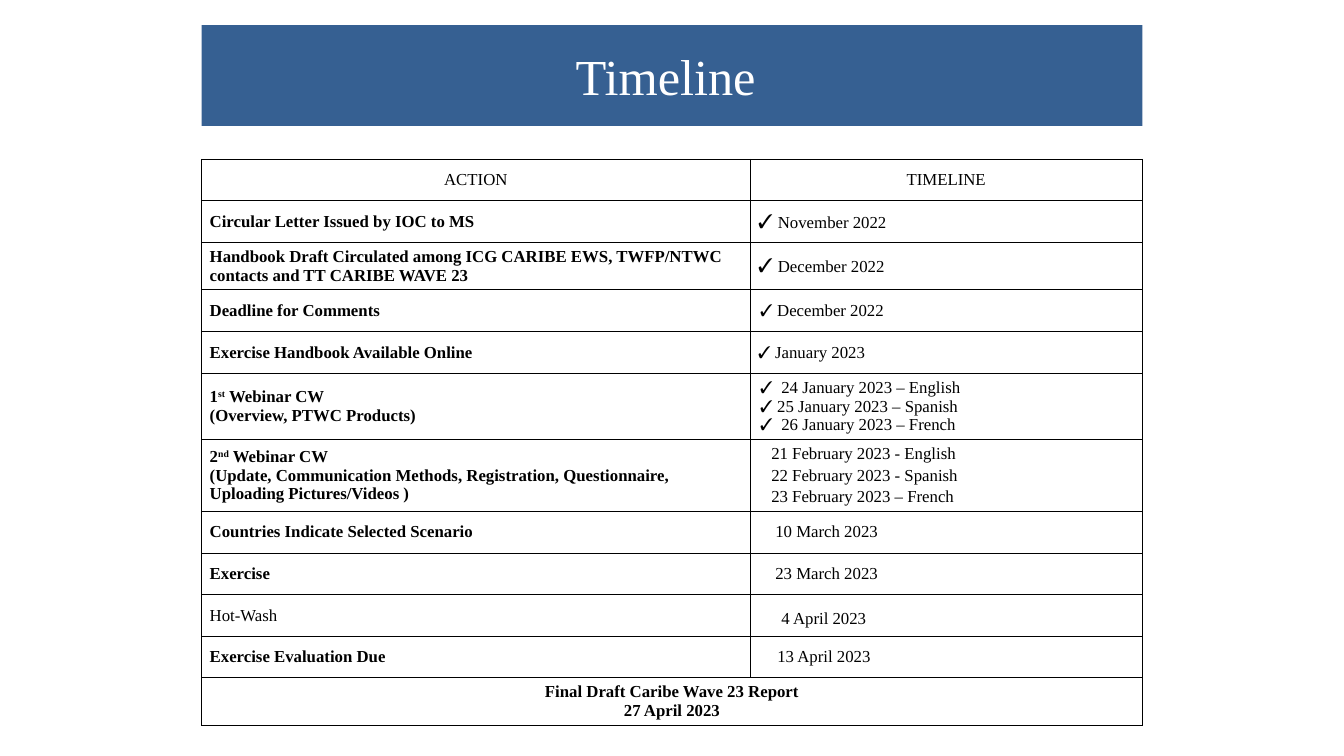
from dataclasses import dataclass

from lxml import etree
from pptx import Presentation
from pptx.dml.color import RGBColor
from pptx.enum import shapes, text
from pptx.oxml import ns
from pptx.util import Inches, Pt


@dataclass(frozen=True)
class Theme:
    font: str = "Times New Roman"
    banner: RGBColor = RGBColor(0x36, 0x60, 0x92)
    on_banner: RGBColor = RGBColor(0xFF, 0xFF, 0xFF)
    ink: RGBColor = RGBColor(0, 0, 0)
    heading: int = 36
    body: int = 12
    tick: int = 14
    rule: float = 0.75


@dataclass(frozen=True)
class Entry:
    paragraphs: tuple
    bold: bool = False
    centred: bool = False
    inset: float = 0.08
    top: float = 0.05
    bottom: float = 0.05
    indent: float = 0
    before: float = 0


class Page:
    def __init__(self, slide, theme):
        self.slide = slide
        self.theme = theme

    def add_run(self, paragraph, words, size, color, bold=False, raised=False):
        run = paragraph.add_run()
        run.text = words
        run.font.name = self.theme.font
        run.font.size = Pt(size)
        run.font.bold = bold
        run.font.color.rgb = color
        if raised:
            run.font._element.set("baseline", "30000")

    def add_banner(self, words, left, top, width, height):
        banner = self.slide.shapes.add_shape(
            shapes.MSO_SHAPE.RECTANGLE, Inches(left), Inches(top), Inches(width), Inches(height))
        banner.shadow.inherit = False
        banner.fill.solid()
        banner.fill.fore_color.rgb = self.theme.banner
        banner.line.fill.background()
        frame = banner.text_frame
        frame.word_wrap = True
        frame.vertical_anchor = text.MSO_ANCHOR.MIDDLE
        heading = frame.paragraphs[0]
        heading.alignment = text.PP_ALIGN.CENTER
        self.add_run(heading, words, self.theme.heading, self.theme.on_banner)

    def add_borders(self, cell):
        props = cell._tc.get_or_add_tcPr()
        for position, side in enumerate(("lnL", "lnR", "lnT", "lnB")):
            border = etree.Element(ns.qn(f"a:{side}"), w=str(Pt(self.theme.rule)))
            fill = etree.SubElement(border, ns.qn("a:solidFill"))
            etree.SubElement(fill, ns.qn("a:srgbClr"), val=str(self.theme.ink))
            props.insert(position, border)

    def fill_cell(self, cell, entry):
        cell.vertical_anchor = text.MSO_ANCHOR.MIDDLE
        cell.margin_left = cell.margin_right = Inches(entry.inset)
        cell.margin_top = Inches(entry.top)
        cell.margin_bottom = Inches(entry.bottom)
        frame = cell.text_frame
        for number, runs in enumerate(entry.paragraphs):
            paragraph = frame.add_paragraph() if number else frame.paragraphs[0]
            paragraph.alignment = text.PP_ALIGN.CENTER if entry.centred else text.PP_ALIGN.LEFT
            if number and entry.before:
                paragraph.space_before = Pt(entry.before)
            if entry.indent:
                paragraph._p.get_or_add_pPr().set("marL", str(Inches(entry.indent)))
            for run in (runs,) if isinstance(runs, str) else runs:
                words, style = (run, {}) if isinstance(run, str) else run
                self.add_run(paragraph, words, style.get("size", self.theme.body),
                             self.theme.ink, entry.bold, style.get("raised", False))

    def add_schedule(self, rows, left, top, columns, base_height, tall_rows):
        schedule = self.slide.shapes.add_table(
            len(rows), len(columns), Inches(left), Inches(top),
            Inches(sum(columns)), Inches(base_height)).table
        schedule.first_row = False
        schedule.horz_banding = False
        for column, width in zip(schedule.columns, columns):
            column.width = Inches(width)
        for number, height in tall_rows.items():
            schedule.rows[number].height = Inches(height)
        for number, entries in enumerate(rows):
            for cell in schedule.rows[number].cells:
                cell.fill.background()
                self.add_borders(cell)
            if len(entries) == 1:
                schedule.cell(number, 0).merge(schedule.cell(number, len(columns) - 1))
            for column, entry in enumerate(entries):
                self.fill_cell(schedule.cell(number, column), entry)


def header(words):
    return Entry((words,), centred=True, inset=0.07, top=0, bottom=0)


def action(*paragraphs):
    return Entry(paragraphs, bold=True)


def date(*paragraphs, **layout):
    return Entry(paragraphs, **layout)


def main():
    theme = Theme()
    deck = Presentation()
    deck.slide_width, deck.slide_height = Inches(13.33), Inches(7.5)
    page = Page(deck.slides.add_slide(deck.slide_layouts[6]), theme)
    tick = {"size": theme.tick}
    raised = {"raised": True}
    rows = [
        (header("ACTION"), header("TIMELINE")),
        (action("Circular Letter Issued by IOC to MS"),
         date((("✓ ", tick), "November 2022"))),
        (action("Handbook Draft Circulated among ICG CARIBE EWS, TWFP/NTWC contacts "
                "and TT CARIBE WAVE 23"),
         date((("✓ ", tick), "December 2022"))),
        (action("Deadline for Comments"), date("✓ December 2022", inset=0.1)),
        (action("Exercise Handbook Available Online"), date("✓ January 2023")),
        (action(("1", ("st", raised), " Webinar CW"), "(Overview, PTWC Products)"),
         date("✓  24 January 2023 – English", "✓ 25 January 2023 – Spanish",
              "✓  26 January 2023 – French", inset=0.1)),
        (action(("2", ("nd", raised), " Webinar CW"),
                "(Update, Communication Methods, Registration, Questionnaire, "
                "Uploading Pictures/Videos )"),
         date("21 February 2023 - English", "22 February 2023 - Spanish",
              "23 February 2023 – French", indent=0.13, before=2)),
        (action("Countries Indicate Selected Scenario"), date("10 March 2023", indent=0.17)),
        (action("Exercise"), date("23 March 2023", indent=0.17)),
        (date("Hot-Wash"), date("4 April 2023", indent=0.23, top=0.11)),
        (action("Exercise Evaluation Due"), date("13 April 2023", inset=0.1, indent=0.17)),
        (Entry(("Final Draft Caribe Wave 23 Report", "27 April 2023"), bold=True, centred=True),),
    ]
    page.add_banner("Timeline ", 2, 0.25, 9.33, 1)
    page.add_schedule(rows, 2, 1.58, (5.44, 3.89), 4.96, {2: 0.47, 5: 0.66, 6: 0.71, 11: 0.47})
    deck.save("out.pptx")


if __name__ == "__main__":
    main()
